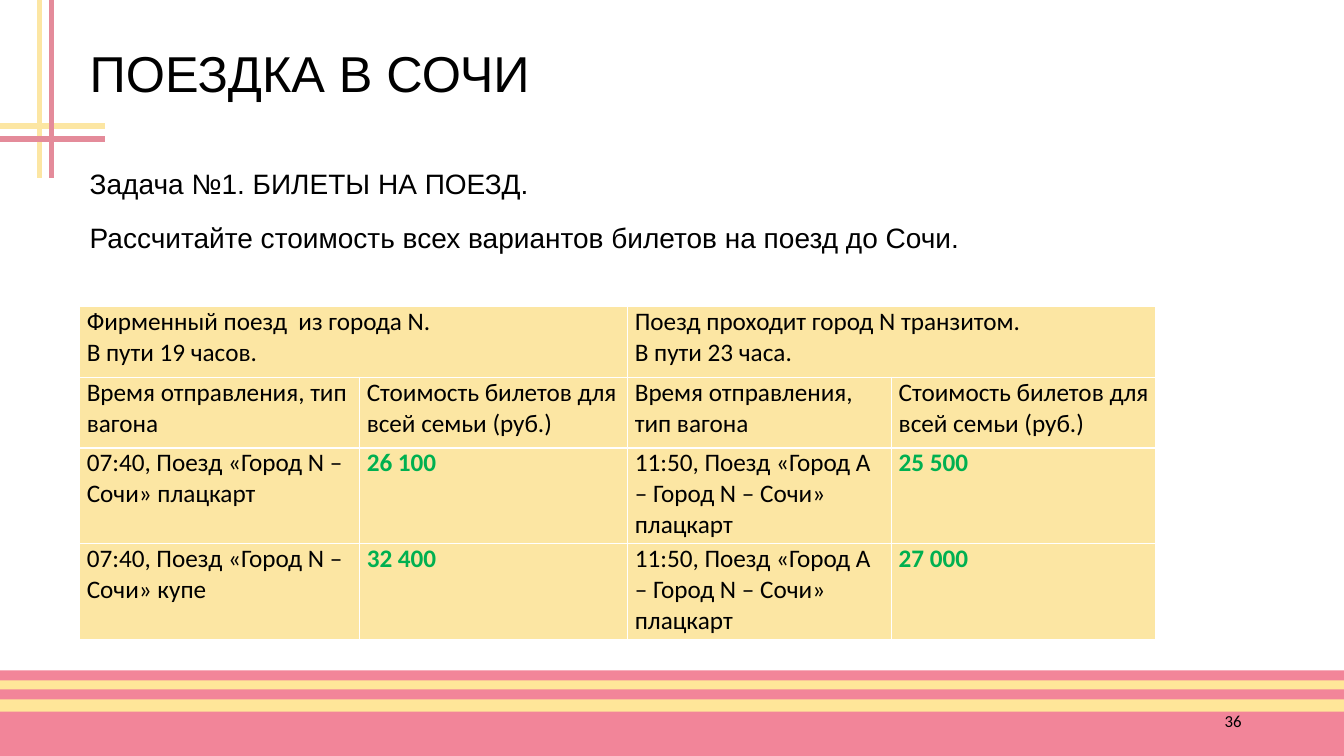
"""Build the slide with train ticket prices for the trip to Sochi."""
from dataclasses import dataclass
from typing import Any

from lxml.etree import SubElement
from pptx import Presentation
from pptx.dml.color import RGBColor as Rgb
from pptx.enum.shapes import MSO_CONNECTOR as Connector, MSO_SHAPE as Shape
from pptx.enum.text import MSO_ANCHOR as Anchor, PP_ALIGN as Align
from pptx.oxml import parse_xml
from pptx.oxml.ns import nsdecls, qn
from pptx.util import Pt


@dataclass(frozen=True)
class Theme:
    black: str = "000000"
    white: str = "FFFFFF"
    green: str = "00B050"
    cream: str = "FCE6A3"
    yellow: str = "FFE699"
    pink: str = "F28599"
    rose: str = "E48B9A"
    heading_font: str = "Arial"
    table_font: str = "Calibri"
    title_size: int = 36
    body_size: int = 20
    table_size: int = 18
    number_size: int = 12


@dataclass(frozen=True)
class Band:
    top: float
    height: float
    color: str


@dataclass(frozen=True)
class Rule:
    start: tuple[float, float]
    end: tuple[float, float]
    color: str


@dataclass(frozen=True)
class Label:
    box: tuple[float, float, float, float]
    text: str
    font: str
    size: int
    frame: dict[str, Any]
    para: dict[str, Any]


THEME = Theme()
WIDTH, HEIGHT = 960, 540
BANDS = (
    Band(479.5, 60.5, THEME.yellow),
    Band(508.3, 31.7, THEME.pink),
    Band(492.5, 7.2, THEME.pink),
    Band(478.8, 7.2, THEME.pink),
)
RULES = (
    Rule((0, 90), (75, 90), THEME.cream),
    Rule((28.1, 0), (28.1, 127.5), THEME.cream),
    Rule((0, 99.4), (75, 99.4), THEME.rose),
    Rule((36.7, 0), (36.7, 127.5), THEME.rose),
)
LABELS = (
    Label((57, 28, 837, 52.5), "ПОЕЗДКА В СОЧИ", THEME.heading_font, THEME.title_size,
          {"vertical_anchor": Anchor.MIDDLE}, {"line_spacing": 0.9}),
    Label((57, 113, 837, 96),
          "Задача №1. БИЛЕТЫ НА ПОЕЗД.\n"
          "Рассчитайте стоимость всех вариантов билетов на поезд до Сочи.",
          THEME.heading_font, THEME.body_size, {"vertical_anchor": Anchor.TOP},
          {"line_spacing": 1.1, "space_after": Pt(12)}),
    Label((678, 500.5, 216, 28.8), "36", THEME.table_font, THEME.number_size,
          {"vertical_anchor": Anchor.MIDDLE}, {"alignment": Align.RIGHT}),
)
TABLE_LEFT, TABLE_TOP = 57, 219
COLUMNS = (200, 191.5, 188.5, 188.5)
ROWS = (50.5, 50.5, 68.5, 68.5)
DEPARTURE = "Время отправления, тип вагона"
COST = "Стоимость билетов для всей семьи (руб.)"
TRANSIT = "11:50, Поезд «Город A – Город N – Сочи» плацкарт"
TICKETS = (
    ("Фирменный поезд  из города N.\nВ пути 19 часов.", "",
     "Поезд проходит город N транзитом.\nВ пути 23 часа.", ""),
    (DEPARTURE, COST, DEPARTURE, COST),
    ("07:40, Поезд «Город N – Сочи» плацкарт", "26 100", TRANSIT, "25 500"),
    ("07:40, Поезд «Город N – Сочи» купе", "32 400", TRANSIT, "27 000"),
)
CELL_FORMAT = {"margin_left": Pt(5), "margin_right": Pt(5), "margin_top": 0,
               "margin_bottom": 0, "vertical_anchor": Anchor.TOP}


def apply(target: Any, values: dict[str, Any]) -> None:
    """Set every named attribute on the target."""
    for name, value in values.items():
        setattr(target, name, value)


def write(frame: Any, text: str, font: str, size: int, color: str = THEME.black,
          bold: bool = False, para_format: dict[str, Any] | None = None) -> None:
    """Fill a text frame, one paragraph for each line."""
    frame.text = text
    for para in frame.paragraphs:
        apply(para, para_format or {})
        for span in para.runs:
            apply(span.font, {"name": font, "size": Pt(size), "bold": bold})
            span.font.color.rgb = Rgb.from_string(color)


def draw_band(page: Any, band: Band) -> None:
    """Draw one full-width stripe."""
    box = page.shapes.add_shape(Shape.RECTANGLE, 0, Pt(band.top), Pt(WIDTH), Pt(band.height))
    box.shadow.inherit = False
    box.fill.solid()
    box.fill.fore_color.rgb = Rgb.from_string(band.color)
    box.line.fill.background()


def draw_rule(page: Any, rule: Rule) -> None:
    """Draw one line of the corner cross."""
    line = page.shapes.add_connector(Connector.STRAIGHT, *map(Pt, rule.start + rule.end))
    line.line.color.rgb = Rgb.from_string(rule.color)
    line.line.width = Pt(4)
    SubElement(line.element.spPr, qn("a:effectLst"))


def draw_label(page: Any, label: Label) -> None:
    """Draw one text box."""
    frame = page.shapes.add_textbox(*map(Pt, label.box)).text_frame
    apply(frame, {"word_wrap": True, **label.frame})
    write(frame, label.text, label.font, label.size, para_format=label.para)


def style_cell(cell: Any) -> None:
    """Give a cell its margins, fill and white borders."""
    apply(cell, CELL_FORMAT)
    cell.fill.solid()
    cell.fill.fore_color.rgb = Rgb.from_string(THEME.cream)
    properties = cell._tc.get_or_add_tcPr()
    for index, side in enumerate(("lnL", "lnR", "lnT", "lnB")):
        properties.insert(index, parse_xml(
            f'<a:{side} {nsdecls("a")} w="{Pt(1)}"><a:solidFill>'
            f'<a:srgbClr val="{THEME.white}"/></a:solidFill></a:{side}>'))


def draw_tickets(page: Any) -> None:
    """Draw the table of ticket prices."""
    table = page.shapes.add_table(len(ROWS), len(COLUMNS), Pt(TABLE_LEFT), Pt(TABLE_TOP),
                                  Pt(sum(COLUMNS)), Pt(sum(ROWS))).table
    apply(table, {"first_row": False, "horz_banding": False})
    for column, width in zip(table.columns, COLUMNS):
        column.width = Pt(width)
    for row, height in zip(table.rows, ROWS):
        row.height = Pt(height)
    for left in (0, 2):
        table.cell(0, left).merge(table.cell(0, left + 1))
    for row_index, texts in enumerate(TICKETS):
        for column_index, text in enumerate(texts):
            cell = table.cell(row_index, column_index)
            style_cell(cell)
            is_price = row_index > 1 and column_index % 2 == 1
            write(cell.text_frame, text, THEME.table_font, THEME.table_size,
                  THEME.green if is_price else THEME.black, is_price)


def main() -> None:
    """Build and save the deck."""
    deck = Presentation()
    apply(deck, {"slide_width": Pt(WIDTH), "slide_height": Pt(HEIGHT)})
    page = deck.slides.add_slide(deck.slide_layouts[6])
    for band in BANDS:
        draw_band(page, band)
    for rule in RULES:
        draw_rule(page, rule)
    for label in LABELS:
        draw_label(page, label)
    draw_tickets(page)
    deck.save("out.pptx")


if __name__ == "__main__":
    main()
